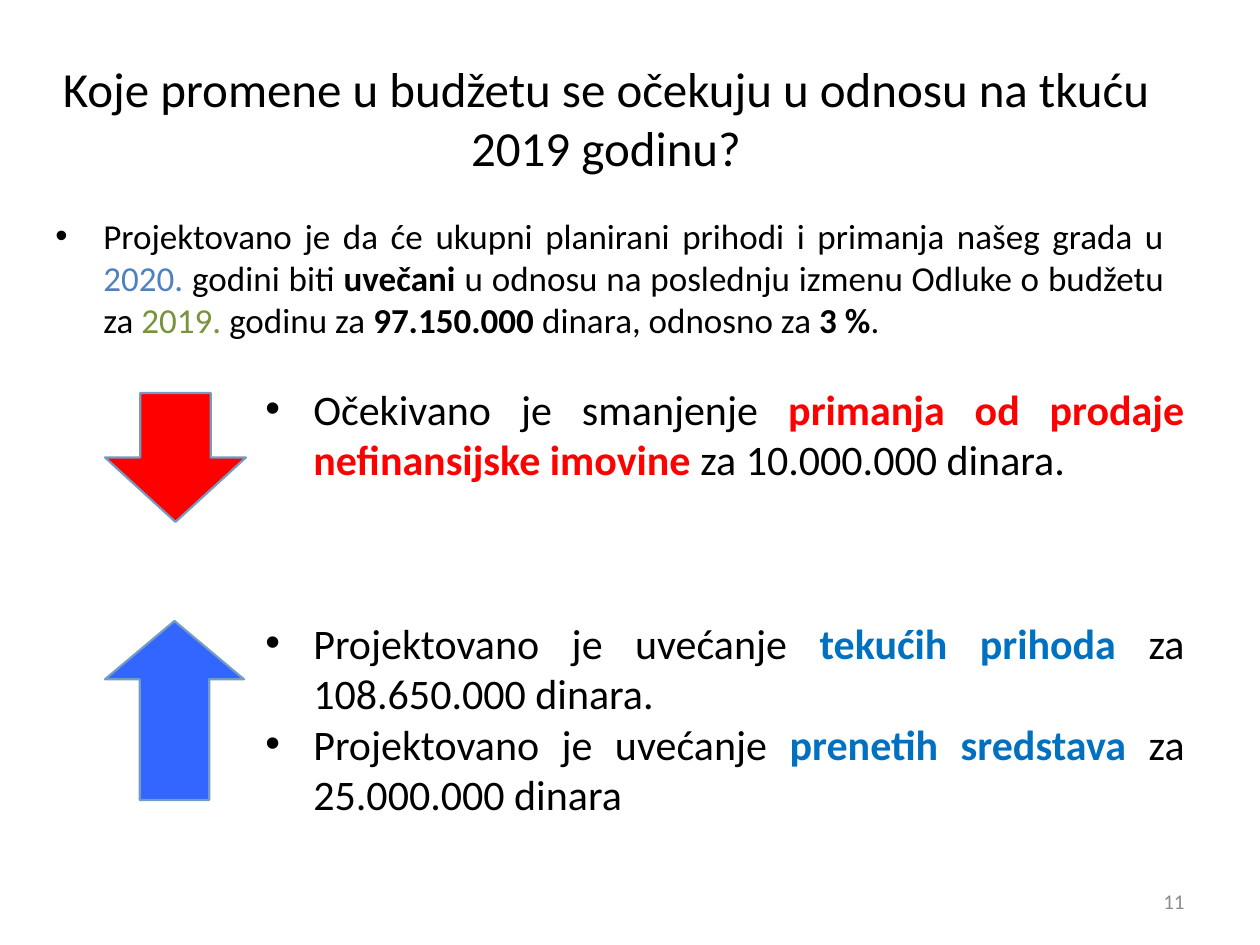
from lxml import etree
from pptx import Presentation
from pptx import util as u
from pptx.dml.color import RGBColor
from pptx.enum import shapes, text
from pptx.oxml import ns

SCALE = 914400 / 126
BLACK, RED, BLUE = "000000", "FF0000", "0070C0"
INDENT = 48
LEFT, WIDTH = 253, 944


def px(length):
    """Turn a whole number of px into EMU."""
    return u.Emu(round(length * SCALE))


def color(value):
    """Turn a hex string into a colour."""
    return RGBColor.from_string(value)


def apply(target, formats):
    """Set attributes from a dict of format values."""
    for name, value in formats.items():
        setattr(target, name, value)


def add_bullet(paragraph):
    """Give a paragraph a hanging round bullet."""
    properties = paragraph._p.get_or_add_pPr()
    properties.set("marL", str(px(INDENT)))
    properties.set("indent", str(-px(INDENT)))
    etree.SubElement(properties, ns.qn("a:buFont"), typeface="Arial")
    etree.SubElement(properties, ns.qn("a:buChar"), char="•")


def add_runs(paragraph, runs, size):
    """Fill a paragraph with (text, colour, bold) runs."""
    for words, shade, bold in runs:
        run = paragraph.add_run()
        run.text = words
        apply(run.font, {"name": "Calibri", "size": u.Pt(size), "bold": bold})
        run.font.color.rgb = color(shade)


def add_text(slide, box, paragraphs, size, align, anchor=text.MSO_ANCHOR.TOP,
             bullet=False, before=0):
    """Add a wrapped text box of formatted paragraphs."""
    frame = slide.shapes.add_textbox(*map(px, box)).text_frame
    apply(frame, {"word_wrap": True, "vertical_anchor": anchor})
    for index, runs in enumerate(paragraphs):
        paragraph = frame.add_paragraph() if index else frame.paragraphs[0]
        apply(paragraph, {"alignment": align, "space_before": u.Pt(before)})
        if bullet:
            add_bullet(paragraph)
        add_runs(paragraph, runs, size)


def add_bullets(slide, box, paragraphs, size, before=0):
    """Add a justified bullet list."""
    add_text(slide, box, paragraphs, size, text.PP_ALIGN.JUSTIFY,
             bullet=True, before=before)


def add_arrow(slide, kind, box, fill, head):
    """Add a block arrow with the given head length."""
    shape = slide.shapes.add_shape(kind, *map(px, box))
    shape.shadow.inherit = False
    shape.adjustments[1] = head
    shape.fill.solid()
    shape.fill.fore_color.rgb = color(fill)
    shape.line.color.rgb = color("739CC3")
    shape.line.width = u.Pt(1.25)


def main():
    """Build and save the slide."""
    presentation = Presentation()
    apply(presentation, {"slide_width": px(1260), "slide_height": px(945)})
    slide = presentation.slides.add_slide(presentation.slide_layouts[6])
    middle = text.MSO_ANCHOR.MIDDLE

    title = "Koje promene u budžetu se očekuju u odnosu na tkuću 2019 godinu?"
    add_text(slide, (35, 38, 1142, 158), [[(title, BLACK, False)]], 28,
             text.PP_ALIGN.CENTER, middle)

    add_bullets(slide, (43, 208, 1134, 156), [[
        ("Projektovano je da će ukupni planirani prihodi i primanja našeg grada u ",
         BLACK, False),
        ("2020. ", "4F81BD", False),
        ("godini biti ", BLACK, False),
        ("uvečani ", BLACK, True),
        ("u odnosu na poslednju izmenu Odluke o budžetu za ", BLACK, False),
        ("2019. ", "77933C", False),
        ("godinu za ", BLACK, False),
        ("97.150.000 ", BLACK, True),
        ("dinara, odnosno za ", BLACK, False),
        ("3 %", BLACK, True),
        (".", BLACK, False),
    ]], 20, before=4)

    add_bullets(slide, (LEFT, 377, WIDTH, 261), [[
        ("Očekivano je smanjenje ", BLACK, False),
        ("primanja od prodaje nefinansijske imovine ", RED, True),
        ("za 10.000.000 dinara.", BLACK, False),
    ]], 24)

    kinds = shapes.MSO_SHAPE
    add_arrow(slide, kinds.DOWN_ARROW, (105, 393, 141, 129), RED, 0.5)
    add_arrow(slide, kinds.UP_ARROW, (105, 621, 139, 179), "3366FF", 0.42)

    add_text(slide, (903, 876, 294, 50), [[("11", "8C8C8C", False)]], 12,
             text.PP_ALIGN.RIGHT, middle)

    increases = [("tekućih prihoda", " za 108.650.000 dinara."),
                 ("prenetih sredstava ", "za 25.000.000 dinara")]
    add_bullets(slide, (LEFT, 611, WIDTH, 208), [
        [("Projektovano je uvećanje ", BLACK, False),
         (source, BLUE, True), (amount, BLACK, False)]
        for source, amount in increases
    ], 24)

    presentation.save("out.pptx")


if __name__ == "__main__":
    main()
